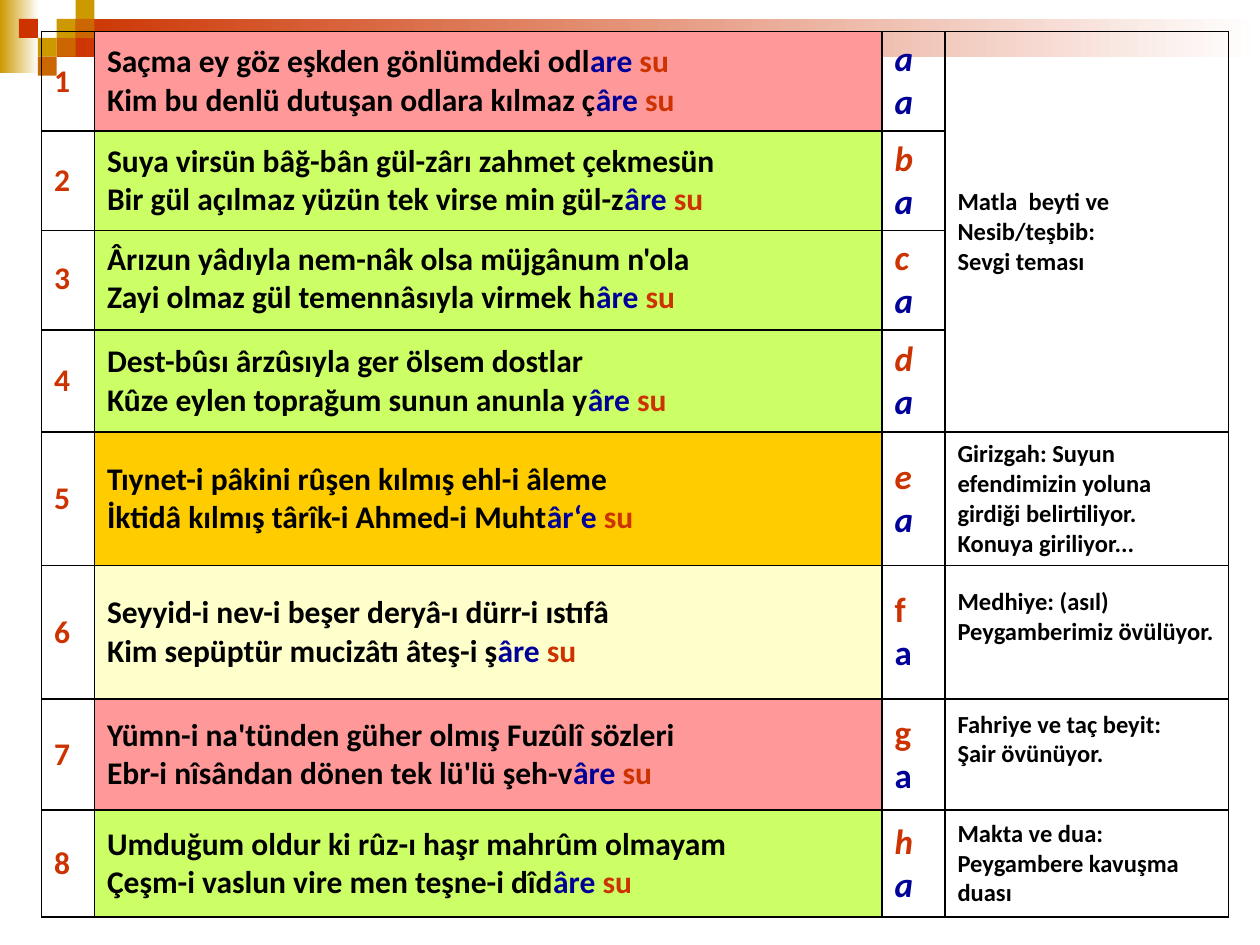
from dataclasses import dataclass
from typing import Any

from lxml import etree
from pptx import Presentation
from pptx.dml.color import RGBColor
from pptx.enum.shapes import MSO_SHAPE
from pptx.enum.text import MSO_ANCHOR
from pptx.oxml.ns import qn
from pptx.util import Inches, Pt

RECTANGLE = MSO_SHAPE.RECTANGLE
MIDDLE = MSO_ANCHOR.MIDDLE
BLACK, BLUE, RED = "000000", "000099", "CC3300"
GOLD, ORANGE, WHITE = "CC9900", "CC6600", "FFFFFF"
PINK, GREEN, AMBER, CREAM = "FF9999", "CCFF66", "FFCC00", "FFFFCC"

COLUMN_WIDTHS = [0.42, 6.25, 0.5, 2.25]
ROW_HEIGHTS = [0.79] * 4 + [1.06] * 2 + [0.88, 0.85]
SQUARES = [(3, 1, GOLD), (4, 0, GOLD), (4, 1, ORANGE), (2, 2, GOLD),
           (1, 1, RED), (3, 2, ORANGE), (2, 3, ORANGE)]
COUPLETS = [
    (PINK, "a", "Saçma ey göz eşkden gönlümdeki odl|are |su",
     "Kim bu denlü dutuşan odlara kılmaz ç|âre |su"),
    (GREEN, "b", "Suya virsün bâğ-bân gül-zârı zahmet çekmesün",
     "Bir gül açılmaz yüzün tek virse min gül-z|âre |su"),
    (GREEN, "c", "Ârızun yâdıyla nem-nâk olsa müjgânum n'ola",
     "Zayi olmaz gül temennâsıyla virmek h|âre |su"),
    (GREEN, "d", "Dest-bûsı ârzûsıyla ger ölsem dostlar",
     "Kûze eylen toprağum sunun anunla y|âre |su"),
    (AMBER, "e", "Tıynet-i pâkini rûşen kılmış ehl-i âleme",
     "İktidâ kılmış târîk-i Ahmed-i Muht|âr‘e |su"),
    (CREAM, "f", "Seyyid-i nev-i beşer deryâ-ı dürr-i ıstıfâ",
     "Kim sepüptür mucizâtı âteş-i ş|âre |su"),
    (PINK, "g", "Yümn-i na'tünden güher olmış Fuzûlî sözleri",
     "Ebr-i nîsândan dönen tek lü'lü şeh-v|âre |su"),
    (GREEN, "h", "Umduğum oldur ki rûz-ı haşr mahrûm olmayam",
     "Çeşm-i vaslun vire men teşne-i dîd|âre |su"),
]
NOTES = {
    0: ["Matla  beyti ve", "Nesib/teşbib:", "Sevgi teması"],
    4: ["Girizgah: Suyun efendimizin yoluna girdiği belirtiliyor.", "Konuya giriliyor..."],
    5: ["Medhiye: (asıl) Peygamberimiz övülüyor."],
    6: ["Fahriye ve taç beyit:", "Şair övünüyor."],
    7: ["Makta ve dua:", "Peygambere kavuşma duası"],
}
TIGHT_ROW = 2
RAISED_NOTES = (5, 6)
UPRIGHT_RHYMES = "fg"


def color(value):
    return RGBColor.from_string(value)


@dataclass
class SlideBuilder:
    """Holds the style and the current slide, and draws each kind of element."""

    slide: Any
    font: str = "Calibri"
    unit: float = 0.15

    def block(self, column, row, columns, rows, start, end=None):
        lengths = [Inches(n * self.unit) for n in (column, row, columns, rows)]
        box = self.slide.shapes.add_shape(RECTANGLE, *lengths)
        box.shadow.inherit = False
        box.line.fill.background()
        if end is None:
            box.fill.solid()
            box.fill.fore_color.rgb = color(start)
            return
        box.fill.gradient()
        box.fill.gradient_angle = 0
        for stop, position, value in zip(box.fill.gradient_stops, (0, 1), (start, end)):
            stop.position = position
            stop.color.rgb = color(value)

    def table(self, left, top, widths, heights):
        frame = self.slide.shapes.add_table(
            len(heights), len(widths), Inches(left), Inches(top),
            Inches(sum(widths)), Inches(sum(heights)))
        table = frame.table
        table.first_row = table.horz_banding = False
        for column, width in zip(table.columns, widths):
            column.width = Inches(width)
        for row, height in zip(table.rows, heights):
            row.height = Inches(height)
        for cell in table.iter_cells():
            self.borders(cell)
            cell.fill.background()
            cell.vertical_anchor = MIDDLE
        return table

    def borders(self, cell):
        properties = cell._tc.get_or_add_tcPr()
        for side in ("a:lnL", "a:lnR", "a:lnT", "a:lnB"):
            line = etree.SubElement(properties, qn(side), w=str(Pt(1)))
            solid = etree.SubElement(line, qn("a:solidFill"))
            etree.SubElement(solid, qn("a:srgbClr"), val=BLACK)

    def text(self, cell, paragraphs, size, italic=False, before=0, spacing=None):
        frame = cell.text_frame
        for index, lines in enumerate(paragraphs):
            para = frame.add_paragraph() if index else frame.paragraphs[0]
            para.space_before = Pt(before)
            if spacing:
                para.line_spacing = spacing
            for number, line in enumerate(lines):
                if number:
                    para.add_line_break()
                for words, value in line:
                    self.run(para, words, size, value, italic)

    def run(self, para, words, size, value, italic):
        span = para.add_run()
        span.text = words
        span.font.name = self.font
        span.font.size = Pt(size)
        span.font.bold = True
        span.font.italic = italic
        span.font.color.rgb = color(value)


def main():
    deck = Presentation()
    deck.slide_width, deck.slide_height = Inches(10), Inches(7.5)
    page = SlideBuilder(deck.slides.add_slide(deck.slide_layouts[6]))

    page.block(0, 0, 2.05, 3.85, GOLD, WHITE)
    page.block(3, 1, 63.67, 2, RED, WHITE)
    for column, row, value in SQUARES:
        page.block(column, row, 1, 1, value)

    table = page.table(0.33, 0.25, COLUMN_WIDTHS, ROW_HEIGHTS)
    table.cell(0, 3).merge(table.cell(3, 3))
    for row, (shade, rhyme, *verses) in enumerate(COUPLETS):
        number, couplet, scheme = (table.cell(row, column) for column in range(3))
        lines = [list(zip(verse.split("|"), (BLACK, BLUE, RED))) for verse in verses]
        tight = row == TIGHT_ROW
        style = {"before": 3.6, "spacing": 0.8} if tight else {}
        page.text(number, [[[(str(row + 1), RED)]]], 18, **style)
        page.text(couplet, [[line] for line in lines] if tight else [lines], 18, **style)
        couplet.fill.solid()
        couplet.fill.fore_color.rgb = color(shade)
        first = BLUE if rhyme == "a" else RED
        page.text(scheme, [[[(rhyme, first)]], [[("a", BLUE)]]], 20,
                  italic=rhyme not in UPRIGHT_RHYMES)

    for row, note in NOTES.items():
        cell = table.cell(row, 3)
        page.text(cell, [[[(words, BLACK)]] for words in note], 14)
        if row in RAISED_NOTES:
            cell.margin_bottom = Inches(0.29)
    deck.save("out.pptx")


if __name__ == "__main__":
    main()
